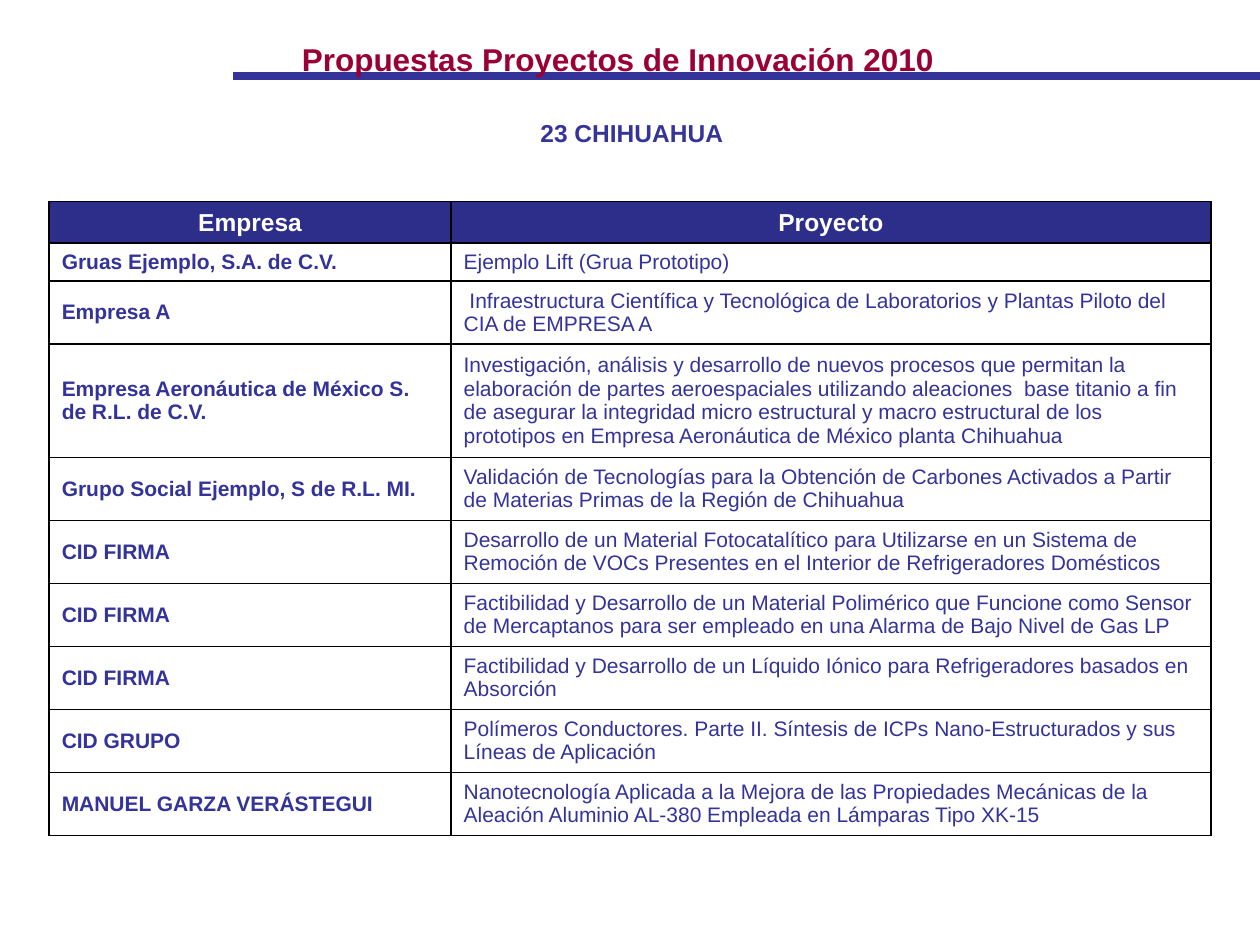
from dataclasses import dataclass

from lxml import etree
from pptx import Presentation
from pptx.dml.color import RGBColor
from pptx.enum.shapes import MSO_CONNECTOR
from pptx.enum.text import MSO_ANCHOR, PP_ALIGN
from pptx.oxml.ns import qn
from pptx.util import Inches, Pt

STRAIGHT = MSO_CONNECTOR.STRAIGHT
MIDDLE, BOTTOM = MSO_ANCHOR.MIDDLE, MSO_ANCHOR.BOTTOM
LEFT, CENTER, RIGHT = PP_ALIGN.LEFT, PP_ALIGN.CENTER, PP_ALIGN.RIGHT


@dataclass(frozen=True)
class Theme:
    font: str = "Arial"
    title: str = "990033"
    subtitle: str = "353599"
    body: str = "333399"
    header_text: str = "FFFFFF"
    header_fill: str = "2D2D8A"
    border: str = "000000"
    title_size: int = 18
    heading_size: int = 14
    body_size: int = 12
    rule_width: float = 4.5
    border_width: float = 1


THEME = Theme()

HEADER = ("Empresa", "Proyecto")
COLUMN_WIDTHS = (3.19, 6.03)
HEADER_HEIGHT = 0.33
# Row height by the number of text lines in the project cell
LINE_HEIGHTS = {1: 0.3, 2: 0.5, 4: 0.9}

# Company, project, text lines
PROJECTS = (
    ("Gruas Ejemplo, S.A. de C.V.", "Ejemplo Lift (Grua Prototipo)", 1),
    ("Empresa A",
     " Infraestructura Científica y Tecnológica de Laboratorios y Plantas "
     "Piloto del CIA de EMPRESA A", 2),
    ("Empresa Aeronáutica de México S. de R.L. de C.V.",
     "Investigación, análisis y desarrollo de nuevos procesos que permitan la "
     "elaboración de partes aeroespaciales utilizando aleaciones  base titanio "
     "a fin de asegurar la integridad micro estructural y macro estructural de "
     "los prototipos en Empresa Aeronáutica de México planta Chihuahua", 4),
    ("Grupo Social Ejemplo, S de R.L. MI.",
     "Validación de Tecnologías para la Obtención de Carbones Activados a "
     "Partir de Materias Primas de la Región de Chihuahua", 2),
    ("CID FIRMA",
     "Desarrollo de un Material Fotocatalítico para Utilizarse en un Sistema "
     "de Remoción de VOCs Presentes en el Interior de Refrigeradores "
     "Domésticos", 2),
    ("CID FIRMA",
     "Factibilidad y Desarrollo de un Material Polimérico que Funcione como "
     "Sensor de Mercaptanos para ser empleado en una Alarma de Bajo Nivel de "
     "Gas LP", 2),
    ("CID FIRMA",
     "Factibilidad y Desarrollo de un Líquido Iónico para Refrigeradores "
     "basados en Absorción", 2),
    ("CID GRUPO",
     "Polímeros Conductores. Parte II. Síntesis de ICPs Nano-Estructurados y "
     "sus Líneas de Aplicación", 2),
    ("MANUEL GARZA VERÁSTEGUI",
     "Nanotecnología Aplicada a la Mejora de las Propiedades Mecánicas de la "
     "Aleación Aluminio AL-380 Empleada en Lámparas Tipo XK-15", 2),
)


def add_run(p, text, size, color, bold):
    r = p.add_run()
    r.text = text
    r.font.name = THEME.font
    r.font.size = Pt(size)
    r.font.bold = bold
    r.font.color.rgb = RGBColor.from_string(color)


def add_rule(s, x1, x2, y):
    line = s.shapes.add_connector(
        STRAIGHT, Inches(x1), Inches(y), Inches(x2), Inches(y))
    line.line.color.rgb = RGBColor.from_string(THEME.body)
    line.line.width = Pt(THEME.rule_width)
    etree.SubElement(line._element.spPr, qn("a:effectLst"))


def add_text(s, box, text, size, color, align, wrap=True, spacing=None):
    sp = s.shapes.add_textbox(*map(Inches, box))
    tf = sp.text_frame
    tf.word_wrap = wrap
    p = tf.paragraphs[0]
    p.alignment = align
    p.line_spacing = spacing
    add_run(p, text, size, color, True)


def set_borders(cell):
    tcPr = cell._tc.get_or_add_tcPr()
    for i, side in enumerate(("lnL", "lnR", "lnT", "lnB")):
        ln = etree.Element(qn(f"a:{side}"), w=str(Pt(THEME.border_width)))
        fill = etree.SubElement(ln, qn("a:solidFill"))
        etree.SubElement(fill, qn("a:srgbClr"), val=THEME.border)
        tcPr.insert(i, ln)


def fill_cell(cell, text, size, color, bold, align=LEFT, anchor=MIDDLE,
              fill=None):
    cell.vertical_anchor = anchor
    if fill:
        cell.fill.solid()
        cell.fill.fore_color.rgb = RGBColor.from_string(fill)
    else:
        cell.fill.background()
    set_borders(cell)
    p = cell.text_frame.paragraphs[0]
    p.alignment = align
    add_run(p, text, size, color, bold)


def add_project_table(s, left, top):
    heights = [HEADER_HEIGHT] + [LINE_HEIGHTS[n] for *_, n in PROJECTS]
    table = s.shapes.add_table(
        len(heights), len(COLUMN_WIDTHS), Inches(left), Inches(top),
        Inches(sum(COLUMN_WIDTHS)), Inches(sum(heights))).table
    for column, width in zip(table.columns, COLUMN_WIDTHS):
        column.width = Inches(width)
    for row, height in zip(table.rows, heights):
        row.height = Inches(height)

    # Header row
    for col, text in enumerate(HEADER):
        fill_cell(table.cell(0, col), text, THEME.heading_size,
                  THEME.header_text, True, CENTER, BOTTOM, THEME.header_fill)

    # Project rows, company in bold
    for row, (company, project, _) in enumerate(PROJECTS, start=1):
        for col, text in enumerate((company, project)):
            fill_cell(table.cell(row, col), text, THEME.body_size,
                      THEME.body, col == 0)


def main():
    prs = Presentation()
    prs.slide_width, prs.slide_height = Inches(10), Inches(7.5)
    s = prs.slides.add_slide(prs.slide_layouts[6])

    # Rule behind the title
    add_rule(s, 1.85, 10, 0.6)

    # Table of companies and projects
    add_project_table(s, 0.39, 1.6)

    # State and title
    add_text(s, (2.66, 0.89, 4.71, 0.33), "23 CHIHUAHUA",
             THEME.heading_size, THEME.subtitle, CENTER)
    add_text(s, (2.24, 0.15, 5.27, 0.52),
             "Propuestas Proyectos de Innovación 2010",
             THEME.title_size, THEME.title, RIGHT, wrap=False, spacing=1.4)

    prs.save("out.pptx")


if __name__ == "__main__":
    main()
